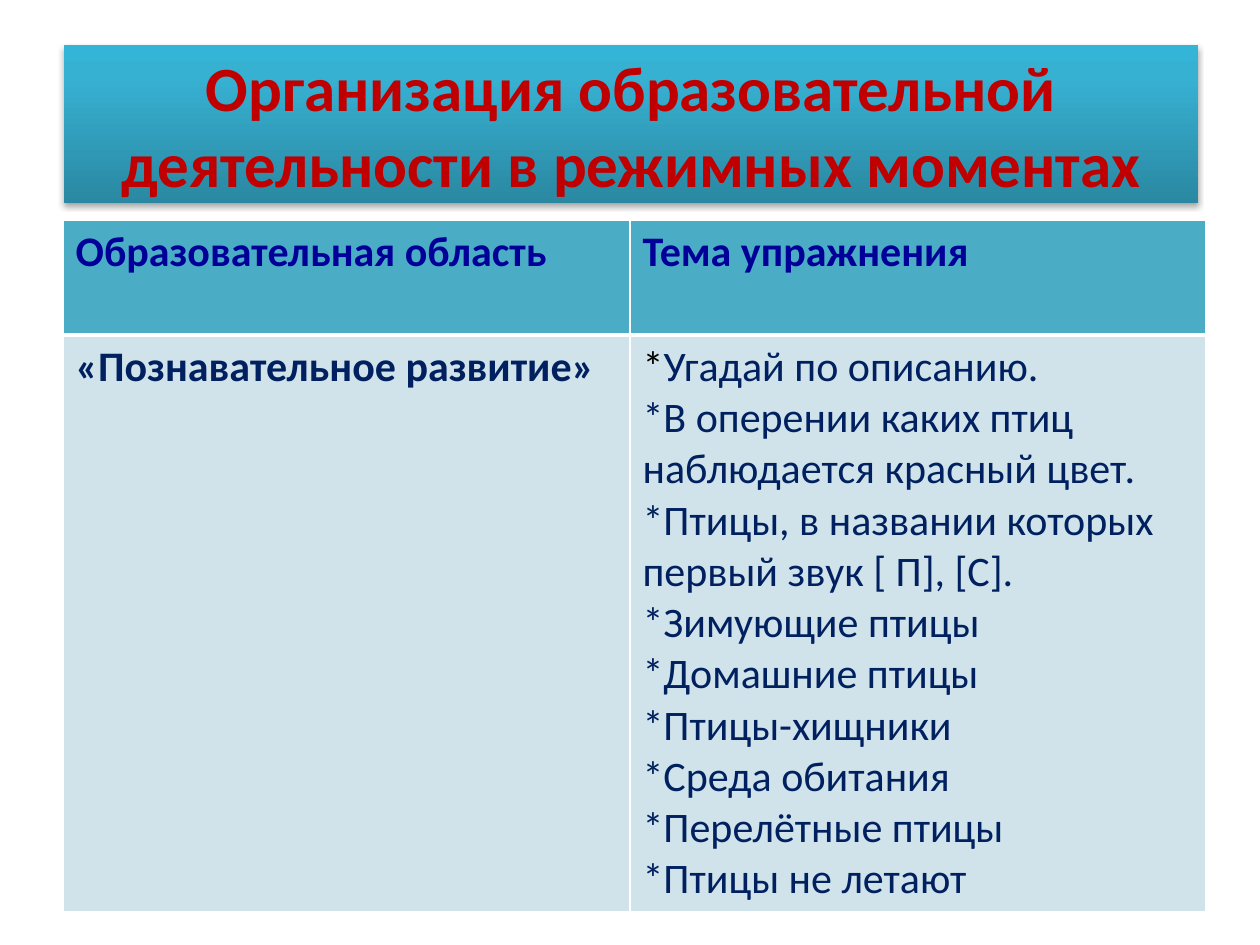
from copy import deepcopy

from lxml import etree
from pptx import Presentation
from pptx.dml.color import RGBColor
from pptx.enum.shapes import MSO_SHAPE
from pptx.enum.text import MSO_ANCHOR, PP_ALIGN
from pptx.oxml.ns import qn
from pptx.util import Inches, Pt

FONT = "Calibri"
RED = RGBColor(0xC0, 0x00, 0x00)
BLUE = RGBColor(0x00, 0x00, 0x99)
NAVY = RGBColor(0x00, 0x20, 0x60)
BLACK = RGBColor(0x00, 0x00, 0x00)
WHITE = RGBColor(0xFF, 0xFF, 0xFF)
HEADER_FILL = RGBColor(0x4B, 0xAC, 0xC6)
BODY_FILL = RGBColor(0xD0, 0xE3, 0xEA)
TITLE_STOPS = [
    (0, RGBColor(0x2A, 0x88, 0xA2)),
    (0.8, RGBColor(0x37, 0xB1, 0xD2)),
    (1, RGBColor(0x34, 0xB4, 0xD6)),
]

TITLE = "Организация образовательной деятельности в режимных моментах"
HEADERS = ["Образовательная область", "Тема упражнения"]
AREA = "«Познавательное развитие»"
EXERCISES = [
    "Угадай по описанию.",
    "В оперении каких птиц наблюдается красный цвет.",
    "Птицы, в названии которых первый звук [ П], [C].",
    "Зимующие птицы",
    "Домашние птицы",
    "Птицы-хищники",
    "Среда обитания",
    "Перелётные птицы",
    "Птицы не летают",
]


def add_text(para, text, size=24, color=NAVY, bold=False):
    span = para.add_run()
    span.text = text
    span.font.name = FONT
    span.font.size = Pt(size)
    span.font.color.rgb = color
    span.font.bold = bold


def fill_gradient(box, stops):
    """Fill the box with stops that run from its bottom to its top."""
    box.fill.gradient()
    box.fill.gradient_angle = 90
    stop_list = box._element.spPr.find(qn("a:gradFill")).find(qn("a:gsLst"))
    stop_list.append(deepcopy(stop_list[-1]))
    for stop, (position, color) in zip(box.fill.gradient_stops, stops):
        stop.position = position
        stop.color.rgb = color


def add_shadow(box):
    box.shadow.inherit = False
    effects = box._element.spPr.find(qn("a:effectLst"))
    shadow = etree.SubElement(
        effects, qn("a:outerShdw"), blurRad=str(Pt(3.1)), dist=str(Pt(1.8)),
        dir="5400000", rotWithShape="0")
    color = etree.SubElement(shadow, qn("a:srgbClr"), val=str(BLACK))
    etree.SubElement(color, qn("a:alpha"), val="35000")


def add_title(page, left, top, width, height):
    box = page.shapes.add_shape(MSO_SHAPE.RECTANGLE, left, top, width, height)
    fill_gradient(box, TITLE_STOPS)
    box.line.fill.background()
    add_shadow(box)
    frame = box.text_frame
    frame.word_wrap = True
    frame.vertical_anchor = MSO_ANCHOR.MIDDLE
    para = frame.paragraphs[0]
    para.alignment = PP_ALIGN.CENTER
    add_text(para, TITLE, size=36, color=RED, bold=True)


def style_cell(cell, color, bottom=1):
    """Set the fill and white borders; bottom is a width in points."""
    properties = cell._tc.get_or_add_tcPr()
    for side, width in (("L", 1), ("R", 1), ("T", 1), ("B", bottom)):
        line = etree.SubElement(properties, qn(f"a:ln{side}"), w=str(Pt(width)))
        solid = etree.SubElement(line, qn("a:solidFill"))
        etree.SubElement(solid, qn("a:srgbClr"), val=str(WHITE))
    cell.fill.solid()
    cell.fill.fore_color.rgb = color


def add_exercises(frame):
    for index, exercise in enumerate(EXERCISES):
        para = frame.add_paragraph() if index else frame.paragraphs[0]
        add_text(para, "*", color=NAVY if index else BLACK)
        add_text(para, exercise)


def add_exercise_table(page, left, top, column_widths, row_heights):
    table = page.shapes.add_table(
        2, 2, left, top, sum(column_widths), sum(row_heights)).table
    for column, width in zip(table.columns, column_widths):
        column.width = width
    for row, height in zip(table.rows, row_heights):
        row.height = height
    for index, header in enumerate(HEADERS):
        cell = table.cell(0, index)
        style_cell(cell, HEADER_FILL, bottom=3)
        add_text(cell.text_frame.paragraphs[0], header, color=BLUE, bold=True)
        style_cell(table.cell(1, index), BODY_FILL)
        if index == 0:
            area = table.cell(1, index).text_frame.paragraphs[0]
            add_text(area, AREA, bold=True)
        else:
            add_exercises(table.cell(1, index).text_frame)
    for index in range(2):
        top_line = table.cell(1, index)._tc.tcPr.find(qn("a:lnT"))
        top_line.set("w", str(Pt(3)))


def main():
    deck = Presentation()
    deck.slide_width = Inches(10)
    deck.slide_height = Inches(7.5)
    page = deck.slides.add_slide(deck.slide_layouts[6])
    add_title(page, Inches(0.51), Inches(0.36), Inches(9), Inches(1.25))
    add_exercise_table(page, Inches(0.5), Inches(1.75),
                       [Inches(4.5), Inches(4.57)],
                       [Inches(0.91), Inches(4.57)])
    deck.save("out.pptx")


if __name__ == "__main__":
    main()
